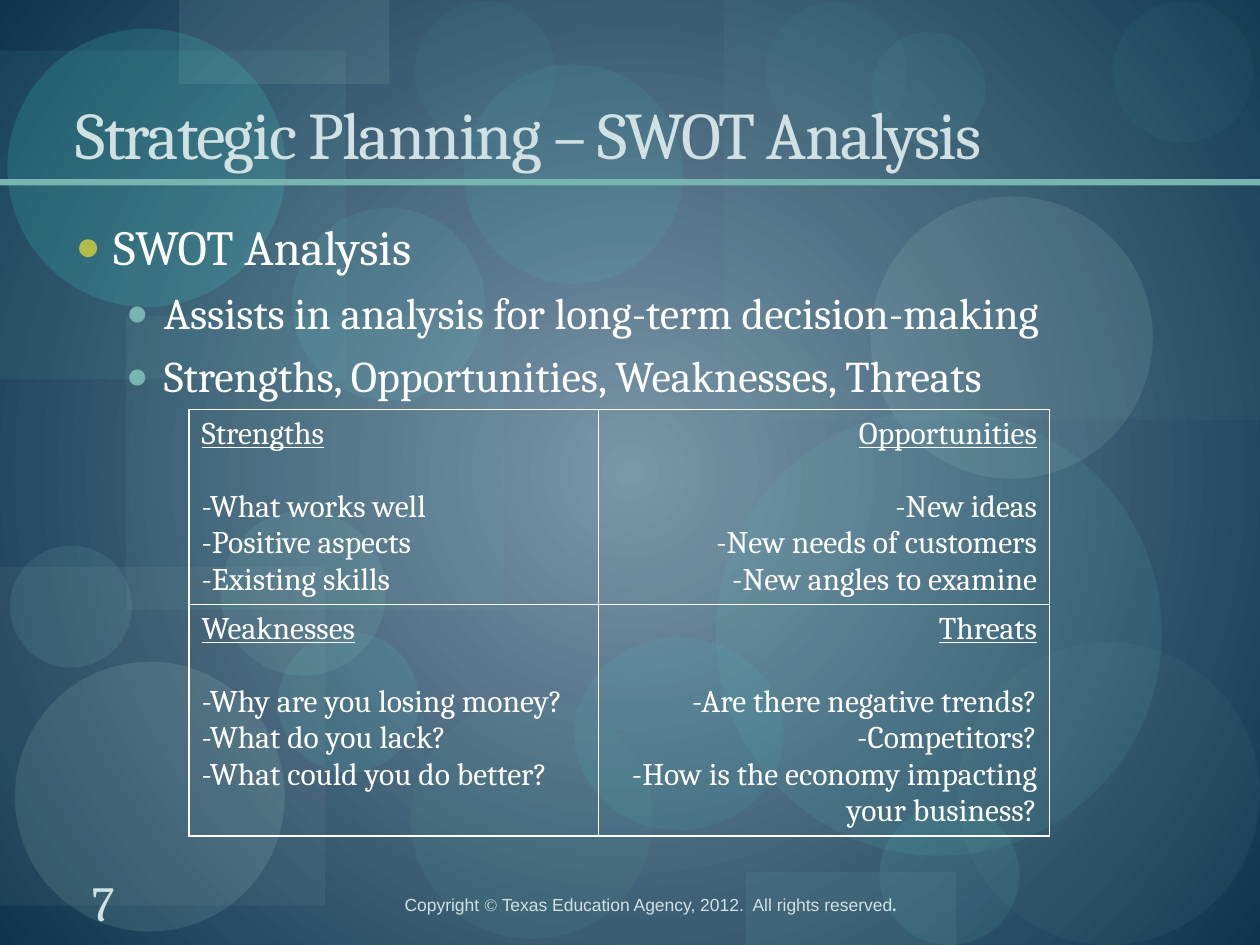
from lxml import etree
from pptx import Presentation
from pptx.dml.color import RGBColor
from pptx.enum.shapes import MSO_SHAPE
from pptx.enum.text import MSO_ANCHOR, MSO_AUTO_SIZE, PP_ALIGN
from pptx.oxml.ns import qn
from pptx.util import Cm, Pt

RECT, OVAL = MSO_SHAPE.RECTANGLE, MSO_SHAPE.OVAL
LEFT, MID, RIGHT = PP_ALIGN.LEFT, PP_ALIGN.CENTER, PP_ALIGN.RIGHT
FONT = "Cambria"
HEX = {
    "glow": "7B96AA", "navy": "0E354D", "white": "FFFFFF", "pale": "D1E1E3",
    "lime": "B4BC4C", "teal": "79B5B0", "moss": "549791", "gray": "B2B7BA",
    "sage": "70A39E", "aqua": "65E8DC", "mist": "C1E8E4", "mint": "44EADC",
    "sea": "77D6CE", "fog": "BED7D4", "foam": "97DCD6", "lake": "61CDC4",
}

# kind, colour, opacity in percent, left, top, width, height (cm)
DECOR = [
    (RECT, "teal", 9, 2.54, 6.38, 7.62, 5.92),
    (OVAL, "moss", 13, 8.28, 14.1, 4.88, 4.83),
    (RECT, "teal", 6, 14.6, 0, 10.8, 8.46),
    (RECT, "gray", 8, 0, 11.43, 6.55, 6.83),
    (OVAL, "sage", 8, 11.61, 6.63, 6.05, 6.05),
    (OVAL, "aqua", 9, 17.73, 16.23, 2.82, 2.82),
    (OVAL, "mist", 11, 17.55, 3.96, 5.69, 5.69),
    (OVAL, "mist", 12, 0.3, 13.34, 5.44, 5.44),
    (OVAL, "aqua", 9, 5.61, 12.73, 2.84, 2.84),
    (OVAL, "mint", 8, 11.58, 12.85, 4.22, 3.89),
    (RECT, "sea", 7, 0, 1.02, 6.98, 6.63),
    (RECT, "fog", 10, 3.61, 0, 4.24, 1.7),
    (OVAL, "mint", 15, 0.15, 0.58, 5.61, 5.61),
    (OVAL, "foam", 10, 0.2, 11, 2.46, 2.46),
    (OVAL, "aqua", 9, 5.89, 4.19, 3.89, 3.89),
    (OVAL, "mint", 8, 9.35, 1.3, 4.42, 4.42),
    (OVAL, "lake", 10, 14.43, 8.26, 8.99, 8.99),
    (OVAL, "aqua", 4, 15.44, 0.03, 2.84, 2.84),
    (OVAL, "sage", 8, 19.3, 12.95, 6.1, 6.1),
    (OVAL, "foam", 10, 4.45, 10.29, 3.33, 3.33),
    (OVAL, "aqua", 6, 17.58, 0.64, 2.29, 2.29),
    (OVAL, "aqua", 4, 22.43, 0.03, 2.84, 2.84),
    (RECT, "teal", 10, 15.04, 17.58, 4.24, 1.47),
    (OVAL, "aqua", 4, 8.36, 0.03, 2.84, 2.84),
    (RECT, "teal", 100, 0, 3.61, 25.4, 0.13),
]
POINTS = [
    (0, "SWOT Analysis"),
    (1, "Assists in analysis for long-term decision-making"),
    (1, "Strengths, Opportunities, Weaknesses, Threats"),
]
# size, indent (cm), space before, bullet colour
LEVELS = [(28, 0.76, 7, "lime"), (25, 1.78, 6, "teal")]
SWOT = [
    [("Strengths", "-What works well", "-Positive aspects", "-Existing skills"),
     ("Opportunities", "-New ideas", "-New needs of customers",
      "-New angles to examine")],
    [("Weaknesses", "-Why are you losing money?", "-What do you lack?",
      "-What could you do better?"),
     ("Threats", "-Are there negative trends?", "-Competitors?",
      "-How is the economy impacting your business?")],
]
FOOT = [
    ("Copyright ", 10, "Arial"),
    ("©", 10, "Times New Roman"),
    (" Texas Education Agency, 2012.  All rights reserved", 10, "Arial"),
    (".", 14, FONT),
]


def color(name):
    return RGBColor.from_string(HEX[name])


def node(parent, tag, **attrs):
    return etree.SubElement(parent, qn(tag), attrs)


class Deck:
    def __init__(self):
        self.prs = Presentation()
        self.prs.slide_width, self.prs.slide_height = Cm(25.4), Cm(19.05)
        self.slide = self.prs.slides.add_slide(self.prs.slide_layouts[1])
        self.shapes = self.slide.shapes

    def back(self, inner, outer):
        """Fill the background with a gradient spreading from the centre."""
        fill = self.slide.background.fill
        fill.gradient()
        for stop, name, pos in zip(fill.gradient_stops, (inner, outer), (0, 1)):
            stop.color.rgb, stop.position = color(name), pos
        line = self.slide.element.find(".//" + qn("a:lin"))
        grad = line.getparent()
        grad.remove(line)
        ring = node(grad, "a:path", path="circle")
        node(ring, "a:fillToRect", l="50000", t="50000", r="50000", b="50000")

    def shape(self, kind, name, alpha, *box):
        item = self.shapes.add_shape(kind, *map(Cm, box))
        item.shadow.inherit = False
        item.fill.solid()
        item.fill.fore_color.rgb = color(name)
        item.line.fill.background()
        if alpha < 100:
            tint = item.element.spPr.find(".//" + qn("a:srgbClr"))
            node(tint, "a:alpha", val=str(alpha * 1000))

    def run(self, para, text, size, name="white", face=FONT, under=False):
        run = para.add_run()
        run.text = text
        font = run.font
        font.size, font.name, font.underline = Pt(size), face, under
        font.color.rgb = color(name)
        return run

    def place(self, item, *box):
        """Move a placeholder to its box, in front of the decoration."""
        item.left, item.top, item.width, item.height = map(Cm, box)
        item.element.getparent().append(item.element)
        item.text_frame.auto_size = MSO_AUTO_SIZE.NONE
        return item.text_frame

    def title(self, text, *box):
        frame = self.place(self.shapes.title, *box)
        frame.vertical_anchor = MSO_ANCHOR.BOTTOM
        para = frame.paragraphs[0]
        para.alignment = LEFT
        run = self.run(para, text, 38, "pale")
        run.font._element.set("spc", "-100")

    def list(self, points, *box):
        frame = self.place(self.slide.placeholders[1], *box)
        for i, (level, text) in enumerate(points):
            para = frame.add_paragraph() if i else frame.paragraphs[0]
            size, indent, gap, name = LEVELS[level]
            para.level, para.space_before = level, Pt(gap)
            props = para._p.get_or_add_pPr()
            props.set("marL", str(Cm(indent)))
            props.set("indent", str(-Cm(0.76)))
            node(node(props, "a:buClr"), "a:srgbClr", val=HEX[name])
            node(props, "a:buSzPct", val="85000")
            node(props, "a:buFont", typeface="Arial")
            node(props, "a:buChar", char="●")
            self.run(para, text, size)

    def text(self, runs, inset, *box):
        frame = self.shapes.add_textbox(*map(Cm, box)).text_frame
        frame.word_wrap, frame.vertical_anchor = True, MSO_ANCHOR.MIDDLE
        if not inset:
            frame.margin_left = frame.margin_right = 0
            frame.margin_top = frame.margin_bottom = 0
        para = frame.paragraphs[0]
        para.alignment = MID
        for text, size, face in runs:
            self.run(para, text, size, "pale", face)

    def cell(self, cell, lines, align):
        cell.fill.background()
        props = cell._tc.get_or_add_tcPr()
        for i, side in enumerate(("a:lnL", "a:lnR", "a:lnT", "a:lnB")):
            edge = node(props, side, w=str(Pt(1)))
            node(node(edge, "a:solidFill"), "a:srgbClr", val=HEX["white"])
            props.insert(i, edge)
        for i, text in enumerate(lines):
            frame = cell.text_frame
            para = frame.add_paragraph() if i else frame.paragraphs[0]
            para.alignment = align
            if i == 0:
                para.space_after = Pt(21)
            self.run(para, text, 18, under=i == 0)

    def table(self, data, left, top, cols, rows):
        box = map(Cm, (left, top, sum(cols), sum(rows)))
        table = self.shapes.add_table(len(rows), len(cols), *box).table
        table.first_row = table.horz_banding = False
        for col, width in zip(table.columns, cols):
            col.width = Cm(width)
        for row, height, texts in zip(table.rows, rows, data):
            row.height = Cm(height)
            for cell, lines, align in zip(row.cells, texts, (LEFT, RIGHT)):
                self.cell(cell, lines, align)


def main():
    deck = Deck()
    deck.back("glow", "navy")
    for item in DECOR:
        deck.shape(*item)
    deck.text([("7", 28, FONT)], False, 0.43, 17.55, 3.3, 1.27)
    deck.text(FOOT, True, 6.35, 17.65, 13.54, 1.07)
    deck.title("Strategic Planning – SWOT Analysis", 1.27, 0.43, 22.86, 3.18)
    deck.list(POINTS, 1.27, 4.24, 21.79, 12.5)
    deck.table(SWOT, 3.81, 8.26, (8.26, 9.09), (3.78, 4.47))
    deck.prs.save("out.pptx")


if __name__ == "__main__":
    main()
